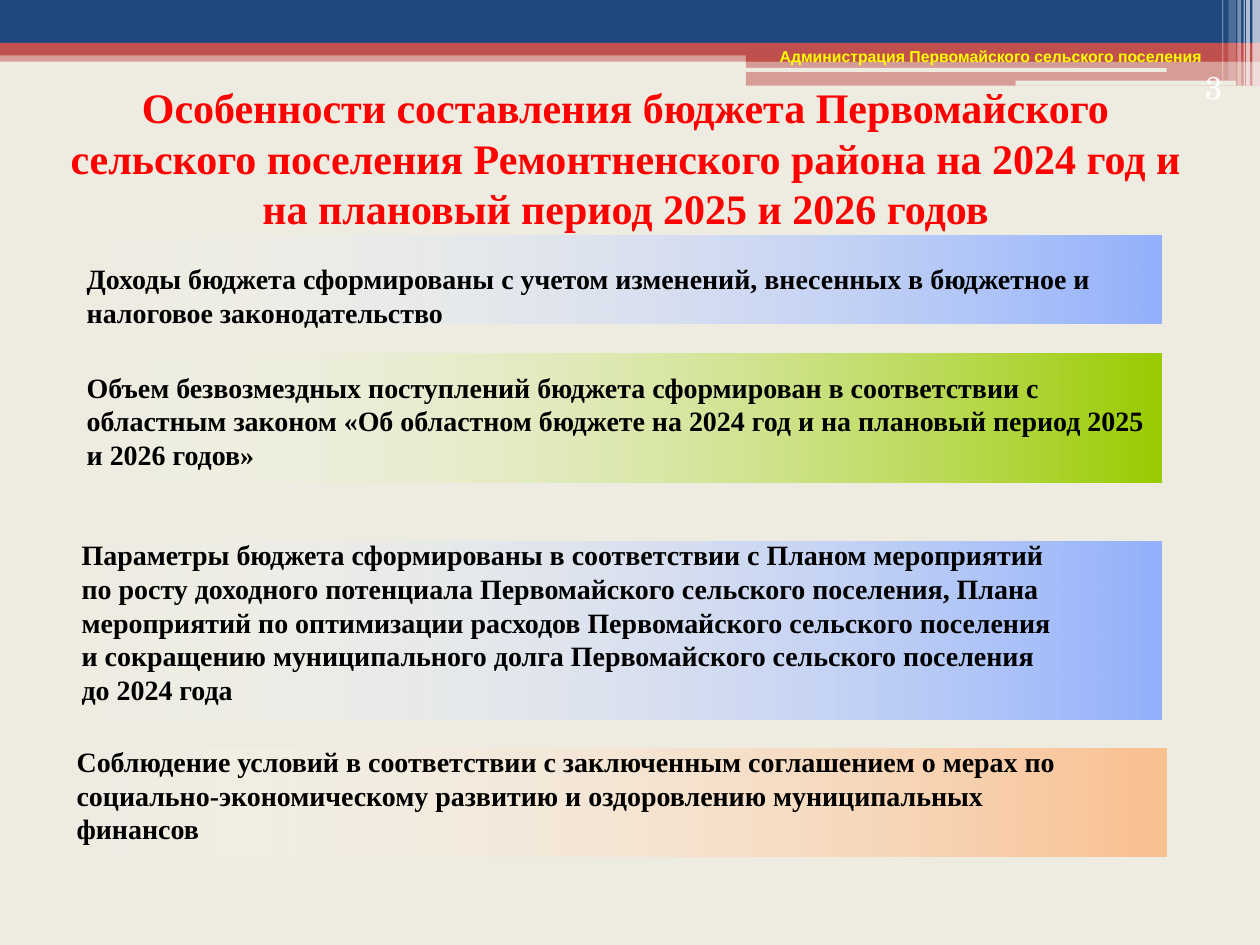
import pptx
import pptx.util
import pptx.dml.color
import pptx.enum.shapes
import pptx.enum.text
import pptx.oxml.ns
from lxml import etree

Inches = pptx.util.Inches
SHAPE = pptx.enum.shapes.MSO_SHAPE
ALIGN = pptx.enum.text.PP_ALIGN
ANCHOR = pptx.enum.text.MSO_ANCHOR
qn = pptx.oxml.ns.qn

COLORS = {
    "back": "EEECE1", "navy": "1F497D", "brick": "C0504D", "white": "FFFFFF",
    "blue": "93B1FD", "green": "99CC00", "peach": "FAC090",
    "red": "FF0000", "black": "000000", "yellow": "FFFF00",
}

BANDS = [
    ((0, 0.4, 10, 0.09), "brick", 50),
    ((0, 0, 10, 0.34), "navy", 100),
    ((0, 0.34, 10, 0.1), "brick", 100),
    ((5.92, 0.39, 4.08, 0.1), "brick", 100),
    ((5.92, 0.48, 4.08, 0.2), "brick", 50),
]
BARS = [(5.91, 0.54, 3.35, 0.03), (8.06, 0.64, 1.75, 0.04)]
STRIPES = [
    (9.94, 0.06, 0.68, 65), (9.89, 0.03, 0.68, 65), (9.87, 0.01, 0.68, 60),
    (9.82, 0.03, 0.68, 40), (9.75, 0.06, 0.64, 20), (9.7, 0.01, 0.64, 30),
]
POINTS = [
    ((0.55, 1.87, 8.67, 0.7), "blue", (0.59, 2.03, 8.63, 0.64),
     "Доходы бюджета сформированы с учетом изменений, внесенных в бюджетное "
     "и налоговое законодательство"),
    ((0.55, 2.81, 8.67, 1.02), "green", (0.59, 2.89, 8.63, 0.91),
     "Объем безвозмездных поступлений бюджета сформирован в соответствии с "
     "областным законом «Об областном бюджете на 2024 год и на плановый "
     "период 2025 и 2026 годов»"),
    ((0.51, 4.3, 8.71, 1.41), "blue", (0.55, 4.22, 8.03, 1.45),
     "Параметры бюджета сформированы в соответствии с Планом мероприятий по "
     "росту доходного потенциала Первомайского сельского поселения, Плана "
     "мероприятий по оптимизации расходов Первомайского сельского поселения "
     "и сокращению муниципального долга Первомайского сельского поселения "
     "до 2024 года"),
    ((0.47, 5.94, 8.79, 0.86), "peach", (0.51, 5.86, 8.19, 0.91),
     "Соблюдение условий в соответствии с заключенным соглашением о мерах по "
     "социально-экономическому развитию и оздоровлению муниципальных финансов"),
]


def rgb(name):
    return pptx.dml.color.RGBColor.from_string(COLORS[name])


def fade(shape, alpha):
    color = next(shape.element.spPr.iter(qn("a:srgbClr")))
    etree.SubElement(color, qn("a:alpha"), val=str(alpha * 1000))


def block(slide, at, kind=SHAPE.RECTANGLE):
    shape = slide.shapes.add_shape(kind, *map(Inches, at))
    shape.shadow.inherit = False
    shape.line.fill.background()
    return shape


def solid(slide, at, color, alpha=100, kind=SHAPE.RECTANGLE):
    shape = block(slide, at, kind)
    shape.fill.solid()
    shape.fill.fore_color.rgb = rgb(color)
    if alpha < 100:
        fade(shape, alpha)


def panel(slide, at, color):
    shape = block(slide, at)
    shape.fill.gradient()
    shape.fill.gradient_angle = 0
    for stop, name in zip(shape.fill.gradient_stops, ("white", color)):
        stop.color.rgb = rgb(name)
    fade(shape, 0)


def label(slide, at, text, size, color, name="Times New Roman", bold=True,
          align=ALIGN.LEFT, anchor=ANCHOR.TOP):
    frame = slide.shapes.add_textbox(*map(Inches, at)).text_frame
    para = frame.paragraphs[0]
    run = para.add_run()
    run.text = text
    looks = {
        frame: {"word_wrap": True, "vertical_anchor": anchor},
        para: {"alignment": align},
        run.font: {"size": pptx.util.Pt(size), "name": name, "bold": bold},
    }
    for part, values in looks.items():
        for key, value in values.items():
            setattr(part, key, value)
    run.font.color.rgb = rgb(color)


def header(slide):
    for at, color, alpha in BANDS:
        solid(slide, at, color, alpha)
    for at in BARS:
        solid(slide, at, "back", kind=SHAPE.ROUNDED_RECTANGLE)
    for left, width, height, alpha in STRIPES:
        solid(slide, (left, 0, width, height), "white", alpha)


def main():
    deck = pptx.Presentation()
    deck.slide_width, deck.slide_height = Inches(10), Inches(7.5)
    slide = deck.slides.add_slide(deck.slide_layouts[6])
    slide.background.fill.solid()
    slide.background.fill.fore_color.rgb = rgb("back")

    header(slide)
    label(slide, (0.28, 0.6, 9.37, 1.31),
          "Особенности составления бюджета Первомайского сельского поселения "
          "Ремонтненского района на 2024 год и на плановый период 2025 и 2026 "
          "годов", 24, "red", align=ALIGN.CENTER)
    label(slide, (6.09, 0.32, 3.6, 0.4),
          "Администрация Первомайского сельского поселения", 9, "yellow", "Arial")
    label(slide, (9.18, 0.32, 0.62, 0.57), "3", 18, "white", "TeX Gyre Schola",
          False, ALIGN.RIGHT, ANCHOR.BOTTOM)
    for area, color, place, text in POINTS:
        panel(slide, area, color)
        label(slide, place, text, 16, "black")
    deck.save("out.pptx")


if __name__ == "__main__":
    main()
